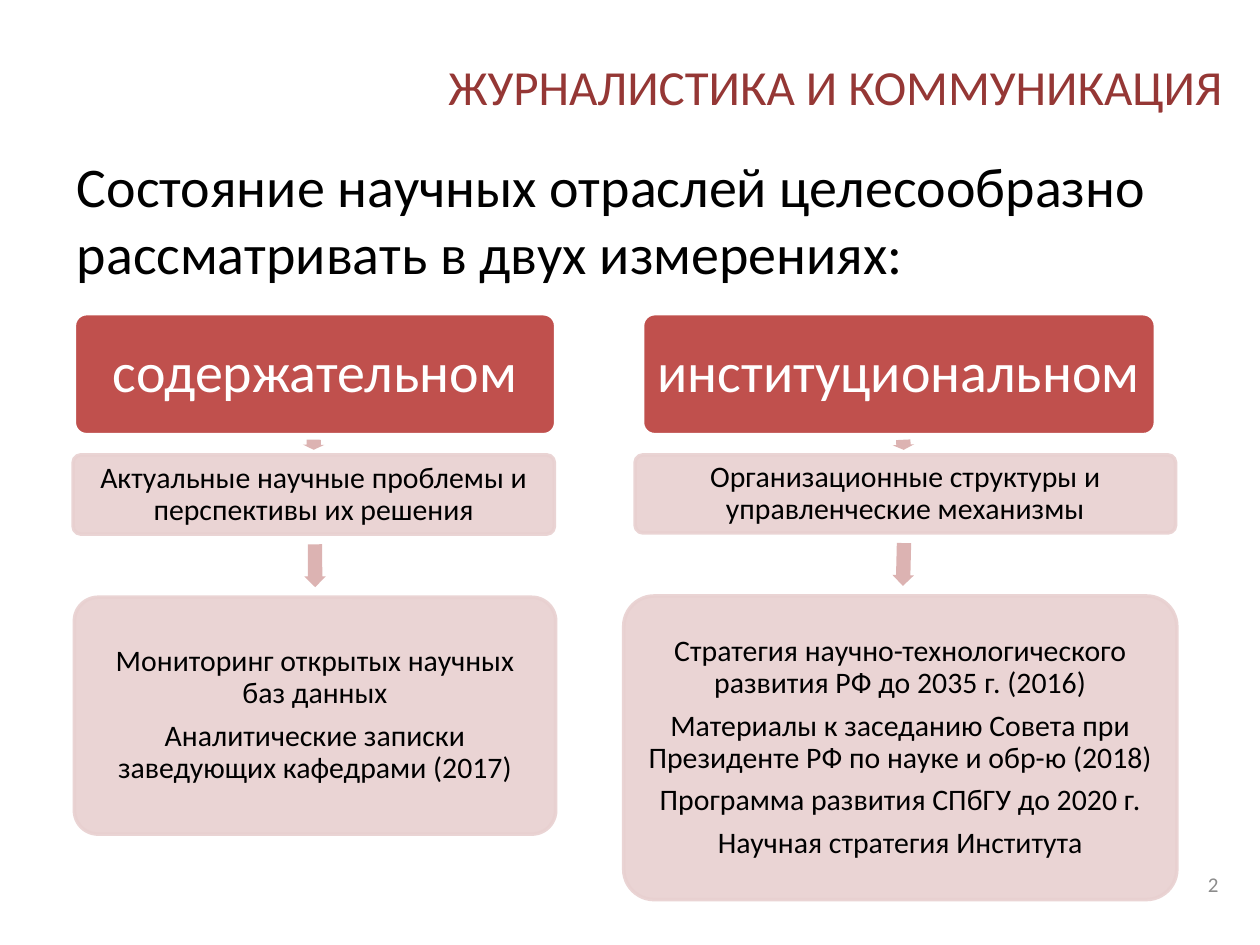
from lxml import etree
from pptx import Presentation
from pptx.dml.color import RGBColor
from pptx.enum.shapes import MSO_SHAPE as SHAPE
from pptx.enum.text import MSO_ANCHOR as ANCHOR, MSO_AUTO_SIZE as AUTO_SIZE, PP_ALIGN as ALIGN
from pptx.oxml.ns import qn
from pptx.util import Inches, Pt

FONT = "Calibri"
BLACK = RGBColor(0x00, 0x00, 0x00)
WHITE = RGBColor(0xFF, 0xFF, 0xFF)
GREY = RGBColor(0x8C, 0x8C, 0x8C)
DARK_RED = RGBColor(0x95, 0x37, 0x35)
RED = RGBColor(0xC0, 0x50, 0x4D)
PINK = RGBColor(0xDC, 0xB3, 0xB2)
PALE_PINK = RGBColor(0xE8, 0xD0, 0xD0)

# Boxes: left, top, width, height; arrows: centre x, centre y, length, rotation
COLUMNS = [
    {
        "head": ("содержательном", (0.59, 2.49, 3.82, 0.96)),
        "details": [
            (["Актуальные научные проблемы и перспективы их решения"],
             (0.58, 3.61, 3.82, 0.63)),
            (["Мониторинг открытых научных баз данных",
              "Аналитические записки заведующих кафедрами (2017)"],
             (0.59, 4.74, 3.82, 1.88)),
        ],
        "arrows": [(2.49, 3.53, 0.08, 90.5), (2.5, 4.49, 0.34, 89.7)],
    },
    {
        "head": ("институциональном", (5.1, 2.49, 4.07, 0.96)),
        "details": [
            (["Организационные структуры и управленческие механизмы"],
             (5.04, 3.61, 4.29, 0.62)),
            (["Стратегия научно-технологического развития РФ до 2035 г. (2016)",
              "Материалы к заседанию Совета при Президенте РФ по науке и обр-ю (2018)",
              "Программа развития СПбГУ до 2020 г.",
              "Научная стратегия Института"],
             (4.95, 4.73, 4.39, 2.41)),
        ],
        "arrows": [(7.17, 3.53, 0.08, 87.1), (7.17, 4.48, 0.34, 91.4)],
    },
]


def place(sp, left, top, width, height):
    sp.left, sp.top = Inches(left), Inches(top)
    sp.width, sp.height = Inches(width), Inches(height)


def write(tf, lines, size, color, align=ALIGN.LEFT, anchor=ANCHOR.MIDDLE,
          line_spacing=1.0, gap=0, inset=None):
    """Fill a text frame, one paragraph a line; gap is the points between them."""
    tf.word_wrap = True
    tf.auto_size = AUTO_SIZE.NONE
    tf.vertical_anchor = anchor
    if inset is not None:
        tf.margin_left = tf.margin_right = Inches(inset)
        tf.margin_top = tf.margin_bottom = Inches(inset)
    for i, line in enumerate(lines):
        p = tf.paragraphs[0] if i == 0 else tf.add_paragraph()
        p.alignment = align
        p.line_spacing = line_spacing
        p.space_before = Pt(gap if i else 0)
        r = p.add_run()
        r.text = line
        r.font.name = FONT
        r.font.size = Pt(size)
        r.font.color.rgb = color


def remove_bullet(p):
    pPr = p._p.get_or_add_pPr()
    pPr.set("marL", "0")
    pPr.set("indent", "0")
    etree.SubElement(pPr, qn("a:buNone"))


def set_opacity(sp, percent):
    """Apply one opacity to both the fill and the line."""
    for clr in sp._element.spPr.iter(qn("a:srgbClr")):
        etree.SubElement(clr, qn("a:alpha")).set("val", str(percent * 1000))


def add_box(slide, lines, at, size, color, fill, line, inset):
    sp = slide.shapes.add_shape(SHAPE.ROUNDED_RECTANGLE, *map(Inches, at))
    sp.shadow.inherit = False
    sp.adjustments[0] = 0.1
    sp.fill.solid()
    sp.fill.fore_color.rgb = fill
    sp.line.color.rgb = line
    sp.line.width = Pt(2)
    write(sp.text_frame, lines, size, color, align=ALIGN.CENTER,
          line_spacing=0.9, gap=6, inset=inset)
    return sp


def add_arrow(slide, x, y, length, rotation):
    """Draw a block arrow around its centre, turned to point down."""
    thickness = 0.17
    sp = slide.shapes.add_shape(
        SHAPE.RIGHT_ARROW, Inches(x - length / 2), Inches(y - thickness / 2),
        Inches(length), Inches(thickness))
    sp.rotation = rotation
    sp.shadow.inherit = False
    sp.adjustments[0] = 0.67
    sp.adjustments[1] = 0.5
    sp.fill.solid()
    sp.fill.fore_color.rgb = PINK
    sp.line.fill.background()


def add_column(slide, column):
    head, at = column["head"]
    add_box(slide, [head], at, 32, WHITE, RED, WHITE, 0.07)
    for arrow, (lines, at) in zip(column["arrows"], column["details"]):
        add_arrow(slide, *arrow)
        inset = 0.04 if len(lines) == 1 else 0.08
        box = add_box(slide, lines, at, 17, BLACK, PALE_PINK, PALE_PINK, inset)
        set_opacity(box, 90)


def main():
    prs = Presentation()
    prs.slide_width, prs.slide_height = Inches(10), Inches(7.5)
    slide = prs.slides.add_slide(prs.slide_layouts[1])

    title, body = slide.placeholders
    place(title, 2.56, 0.3, 7.24, 0.77)
    write(title.text_frame, ["ЖУРНАЛИСТИКА И КОММУНИКАЦИЯ"], 28, DARK_RED,
          align=ALIGN.RIGHT)

    place(body, 0.51, 1.15, 9, 1.42)
    write(body.text_frame,
          ["Состояние научных отраслей целесообразно рассматривать в двух измерениях:"],
          32, BLACK, anchor=ANCHOR.TOP)
    remove_bullet(body.text_frame.paragraphs[0])

    number = slide.shapes.add_textbox(*map(Inches, (7.44, 6.82, 2.33, 0.4)))
    write(number.text_frame, ["2"], 12, GREY, align=ALIGN.RIGHT)

    for column in COLUMNS:
        add_column(slide, column)

    prs.save("out.pptx")


if __name__ == "__main__":
    main()
